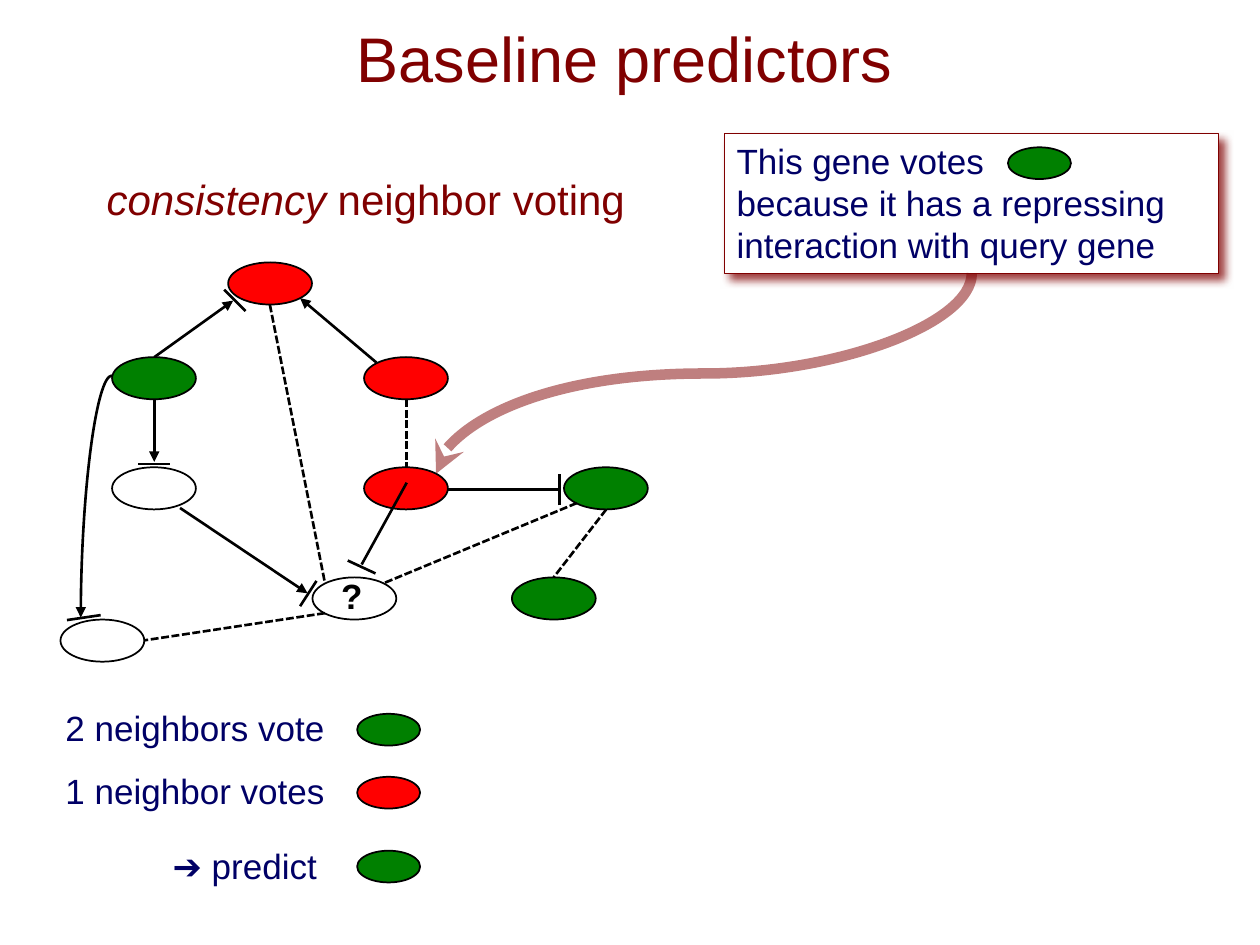
import pptx
import pptx.dml.color
import pptx.enum.dml
import pptx.enum.shapes
import pptx.enum.text
import pptx.oxml
import pptx.oxml.ns
import pptx.util

Cm, Pt = pptx.util.Cm, pptx.util.Pt
RGBColor = pptx.dml.color.RGBColor
MSO_SHAPE = pptx.enum.shapes.MSO_SHAPE
MSO_CONNECTOR = pptx.enum.shapes.MSO_CONNECTOR
MSO_ANCHOR = pptx.enum.text.MSO_ANCHOR
PP_ALIGN = pptx.enum.text.PP_ALIGN
DASH = pptx.enum.dml.MSO_LINE.SQUARE_DOT

MAROON = RGBColor(0x80, 0x00, 0x00)
NAVY = RGBColor(0x00, 0x00, 0x66)
GREEN = RGBColor(0x00, 0x80, 0x00)
RED = RGBColor(0xFF, 0x00, 0x00)
BLACK = RGBColor(0x00, 0x00, 0x00)
WHITE = RGBColor(0xFF, 0xFF, 0xFF)

NODE = (1.69, 0.85)
VOTE = (1.27, 0.64)


def add_xml(parent, tag, **attrs):
    el = pptx.oxml.parse_xml(f"<a:{tag} {pptx.oxml.ns.nsdecls('a')}/>")
    for name, value in attrs.items():
        el.set(name, str(value))
    parent.append(el)
    return el


class Sketch:
    """Draws styled elements on the current slide, with lengths in centimetres."""

    font = {"name": "Arial", "size": Pt(20), "bold": False, "italic": False}

    def __init__(self, s):
        self.s = s

    def fill_text(self, tf, lines, color, align=PP_ALIGN.LEFT, **frame):
        for name, value in frame.items():
            setattr(tf, name, value)
        p = tf.paragraphs[0]
        p.alignment = align
        for i, runs in enumerate(lines):
            if i:
                p.add_line_break()
            for text, fmt in runs:
                r = p.add_run()
                r.text = text
                r.font.color.rgb = color
                for name, value in {**self.font, **fmt}.items():
                    setattr(r.font, name, value)

    def text(self, x, y, w, h, runs, color, **options):
        sp = self.s.shapes.add_textbox(Cm(x), Cm(y), Cm(w), Cm(h))
        self.fill_text(sp.text_frame, [runs], color, **{"word_wrap": False, **options})

    def shape(self, kind, x, y, size, fill, line=BLACK, width=1):
        sp = self.s.shapes.add_shape(kind, Cm(x), Cm(y), *map(Cm, size))
        sp.shadow.inherit = False
        if fill is None:
            sp.fill.background()
        else:
            sp.fill.solid()
            sp.fill.fore_color.rgb = fill
        sp.line.color.rgb = line
        sp.line.width = Pt(width)
        return sp

    def oval(self, x, y, size, fill):
        return self.shape(MSO_SHAPE.OVAL, x, y, size, fill)

    def callout(self, x, y, size, lines):
        sp = self.shape(MSO_SHAPE.RECTANGLE, x, y, size, WHITE, MAROON, 0.75)
        effects = sp._element.spPr.find(pptx.oxml.ns.qn("a:effectLst"))
        shadow = add_xml(effects, "outerShdw", blurRad=Pt(5), dist=Pt(5),
                         dir=45 * 60000, algn="tl", rotWithShape=0)
        add_xml(add_xml(shadow, "srgbClr", val=MAROON), "alpha", val=75000)
        self.fill_text(sp.text_frame, [[(t, {})] for t in lines], NAVY,
                       word_wrap=True, vertical_anchor=MSO_ANCHOR.TOP)

    def line(self, x1, y1, x2, y2, kind=MSO_CONNECTOR.STRAIGHT, color=BLACK,
             width=1.5, dash=None, tail=None):
        cxn = self.s.shapes.add_connector(kind, Cm(x1), Cm(y1), Cm(x2), Cm(y2))
        cxn.line.color.rgb = color
        for name, value in {"width": Pt(width), "dash_style": dash}.items():
            setattr(cxn.line, name, value)
        if tail:
            ln = cxn._element.spPr.find(pptx.oxml.ns.qn("a:ln"))
            add_xml(ln, "tailEnd", type=tail)
        add_xml(cxn._element.spPr, "effectLst")
        return cxn

    def quarter_curve(self, *ends):
        cxn = self.line(*ends, kind=MSO_CONNECTOR.CURVE, tail="triangle")
        geom = cxn._element.spPr.find(pptx.oxml.ns.qn("a:prstGeom"))
        geom.set("prst", "curvedConnector2")

    def pointer(self, x, y, w, h):
        cxn = self.line(x, y, x + w, y + h, kind=MSO_CONNECTOR.CURVE,
                        color=MAROON, width=6, tail="stealth")
        spPr = cxn._element.spPr
        spPr.find(pptx.oxml.ns.qn("a:xfrm")).set("rot", str(90 * 60000))
        clr = next(spPr.iter(pptx.oxml.ns.qn("a:srgbClr")))
        add_xml(clr, "alpha", val=50000)


def main():
    prs = pptx.Presentation()
    prs.slide_width, prs.slide_height = Cm(25.4), Cm(19.05)
    sk = Sketch(prs.slides.add_slide(prs.slide_layouts[6]))

    sk.text(0.43, 0.43, 24.33, 1.47, [("Baseline predictors", {"size": Pt(36)})],
            MAROON, align=PP_ALIGN.CENTER, word_wrap=True,
            vertical_anchor=MSO_ANCHOR.MIDDLE)
    sk.text(1.9, 3.38, 11.07, 1.27,
            [("consistency ", {"size": Pt(24), "italic": True}),
             ("neighbor voting", {"size": Pt(24)})], MAROON)

    votes = [("2 neighbors vote", 1.07, 14.12, 5.79, 14.39, GREEN),
             ("1 neighbor votes", 1.07, 15.39, 5.79, 15.66, RED),
             ("➔ predict", 3.23, 16.89, 3.61, 17.15, GREEN)]
    for label, x, y, w, oval_y, fill in votes:
        sk.text(x, y, w, 1.12, [(label, {})], NAVY)
        sk.oval(7.2, oval_y, VOTE, fill)

    genes = [(7.34, 7.2, RED), (2.26, 7.2, GREEN), (4.6, 5.29, RED),
             (7.34, 9.42, RED), (2.26, 9.42, None), (6.3, 11.64, None),
             (11.37, 9.42, GREEN), (1.22, 12.49, None), (10.32, 11.64, GREEN)]
    for x, y, fill in genes:
        sk.oval(x, y, NODE, fill)
    sk.text(6.63, 11.46, 0.94, 1.12, [("?", {"bold": True})], BLACK)

    undirected = [(5.44, 6.14, 6.55, 11.75), (8.2, 8.05, 8.2, 9.42),
                  (12.22, 10.27, 11.16, 11.64), (11.63, 10.14, 7.75, 11.75),
                  (6.55, 12.36, 2.9, 12.91)]
    arrows = [(3.11, 7.2, 4.7, 6.06), (3.11, 8.05, 3.11, 9.31),
              (3.63, 10.24, 6.2, 11.96), (7.59, 7.31, 6.05, 6.01)]
    repressing = [(8.2, 9.73, 7.29, 11.38), (9.03, 9.87, 11.25, 9.87)]
    bars = [(2.79, 9.35, 3.43, 9.35), (6.05, 12.22, 6.38, 11.71),
            (4.52, 5.84, 4.95, 6.27), (1.35, 12.5, 2.03, 12.4),
            (11.28, 10.19, 11.28, 9.55), (7.01, 11.3, 7.57, 11.56)]
    for edges, style in [(undirected, {"dash": DASH}), (arrows, {"tail": "triangle"}),
                         (repressing + bars, {})]:
        for ends in edges:
            sk.line(*ends, **style)
    sk.quarter_curve(2.26, 7.57, 1.63, 12.45)

    sk.callout(14.6, 2.69, (9.96, 2.82),
               ["This gene votes", "because it has a repressing",
                "interaction with query gene"])
    sk.pointer(12.17, 2.13, 4.04, 10.8)
    sk.oval(20.32, 2.97, VOTE, GREEN)

    prs.save("out.pptx")


if __name__ == "__main__":
    main()
